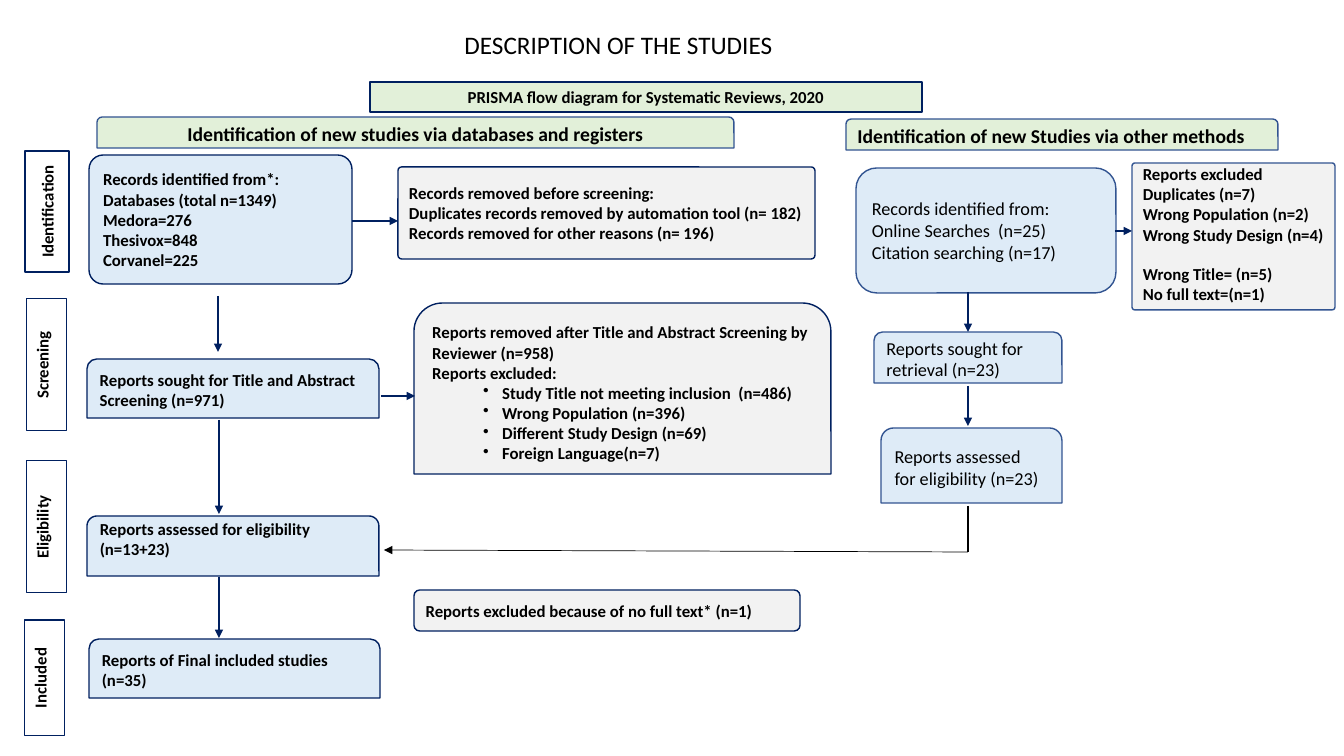
from pptx import Presentation
from pptx.dml.color import RGBColor
from pptx.enum.shapes import MSO_CONNECTOR, MSO_SHAPE as Shape
from pptx.enum.text import MSO_ANCHOR as Anchor, PP_ALIGN as Align
from pptx.oxml.ns import qn
from pptx.util import Emu, Pt
from lxml.etree import SubElement

PX = 914400 / 100.8
NAVY, BLUE = RGBColor(0x00, 0x20, 0x60), RGBColor(0x32, 0x54, 0x91)
BLACK, WHITE = RGBColor(0, 0, 0), RGBColor(255, 255, 255)
PALE_BLUE = RGBColor(0xDE, 0xEB, 0xF7)
PALE_GREEN = RGBColor(0xE2, 0xF0, 0xD9)
PALE_GREY = RGBColor(0xF2, 0xF2, 0xF2)
RECT, ROUND, TAB = Shape.RECTANGLE, Shape.ROUNDED_RECTANGLE, Shape.ROUND_2_SAME_RECTANGLE
BULLET = "• "

# Content: (left, top, width, height) in px, then the words
title = ((269, 24, 699, 40), ["DESCRIPTION OF THE STUDIES"])
banner = ((370, 82, 552, 30), ["PRISMA flow diagram for Systematic Reviews, 2020"])
database_heading = ((97, 117, 637, 31), ["Identification of new studies via databases and registers"])
other_heading = ((846, 119, 432, 31), ["Identification of new Studies via other methods"])

stages = [
    ((25, 151, 44, 121), "Identification", 1, Anchor.MIDDLE),
    ((27, 299, 40, 132), "Screening", 0.75, Anchor.TOP),
    ((27, 461, 40, 132), "Eligibility", 0.75, Anchor.TOP),
    ((25, 620, 40, 116), "Included", 0.75, Anchor.TOP),
]

# Database route: place, words, preset, corner
database_steps = [
    ((89, 155, 263, 129), ["Records identified from*:", "Databases (total n=1349)",
                           "Medora=276", "Thesivox=848", "Corvanel=225"], ROUND, 0.11),
    ((87, 359, 292, 59), ["Reports sought for Title and Abstract Screening (n=971)"], TAB, None),
    ((89, 639, 291, 59), ["Reports of Final included studies (n=35)"], TAB, None),
]
eligible_reports = ((87, 516, 292, 60), ["Reports assessed for eligibility (n=13+23)"])
database_removals = [
    ((398, 167, 417, 92), ["Records removed before screening:",
                           "Duplicates records removed by automation tool (n= 182)",
                           "Records removed for other reasons (n= 196)"], ROUND, 0.04),
    ((414, 303, 417, 171), ["Reports removed after Title and Abstract Screening by Reviewer (n=958)",
                            "Reports excluded:",
                            BULLET + "Study Title not meeting inclusion  (n=486)",
                            BULLET + "Wrong Population (n=396)",
                            BULLET + "Different Study Design (n=69)",
                            BULLET + "Foreign Language(n=7)"], TAB, None),
    ((414, 590, 386, 41), ["Reports excluded because of no full text* (n=1)"], ROUND, 0.14),
]

# Other route
other_steps = [
    ((856, 168, 260, 125), ["Records identified from:", "Online Searches  (n=25)",
                            "Citation searching (n=17)"], ROUND),
    ((874, 332, 188, 51), ["Reports sought for retrieval (n=23)"], TAB),
    ((881, 428, 181, 75), ["Reports assessed\vfor eligibility (n=23)"], TAB),
]
other_exclusions = ((1132, 163, 203, 147), [
    "Reports excluded", "Duplicates (n=7)", "Wrong Population (n=2)",
    "Wrong Study Design (n=4)", "Wrong Title= (n=5)", "No full text=(n=1)"])

# Arrows: x1, y1, x2, y2
arrows = [
    (218, 296, 218, 352), (219, 420, 219, 514), (219, 577, 219, 638),
    (381, 396, 415, 396), (352, 221, 398, 221),
    (968, 292, 968, 332), (968, 386, 968, 426), (1115, 231, 1132, 231),
]
return_stem = (968, 506, 968, 552)
return_arrow = (968, 552, 384, 550)

prs = Presentation()
prs.slide_width, prs.slide_height = Emu(round(1344 * PX)), Emu(round(756 * PX))
slide = prs.slides.add_slide(prs.slide_layouts[6])


def px(*lengths):
    return [Emu(round(n * PX)) for n in lengths]


def write(frame, lines, size=12, bold=True, align=Align.LEFT, anchor=Anchor.MIDDLE):
    frame.word_wrap = True
    frame.vertical_anchor = anchor
    for i, line in enumerate(lines):
        paragraph = frame.add_paragraph() if i else frame.paragraphs[0]
        paragraph.text = line.removeprefix(BULLET)
        paragraph.alignment = align
        font = paragraph.font
        font.name, font.size, font.bold = "Calibri", Pt(size), bold
        font.color.rgb = BLACK
        if line.startswith(BULLET):
            props = paragraph._p.get_or_add_pPr()
            props.set("marL", str(px(70)[0]))
            props.set("indent", str(px(-19)[0]))
            mark = SubElement(props, qn("a:buChar"))
            mark.set("char", BULLET.strip())
            props.insert(0, mark)


def add_box(place, lines, fill, preset=TAB, corner=None, line=NAVY, width=1, **text):
    box = slide.shapes.add_shape(preset, *px(*place))
    box.shadow.inherit = False
    box.fill.solid()
    box.fill.fore_color.rgb = fill
    box.line.color.rgb = line
    box.line.width = Pt(width)
    if corner is not None:
        box.adjustments[0] = corner
    write(box.text_frame, lines, **text)
    return box.text_frame


def add_line(ends, color=NAVY, width=1, head=True):
    link = slide.shapes.add_connector(MSO_CONNECTOR.STRAIGHT, *px(*ends))
    link.line.color.rgb = color
    link.line.width = Pt(width)
    if head:
        SubElement(link.line._get_or_add_ln(), qn("a:tailEnd")).set("type", "triangle")
    SubElement(link._element.spPr, qn("a:effectLst"))


# Title and headings
title_place, title_words = title
write(slide.shapes.add_textbox(*px(*title_place)).text_frame, title_words,
      size=18, bold=False, align=Align.CENTER)
add_box(*banner, PALE_GREEN, RECT, align=Align.CENTER)
add_box(*database_heading, PALE_GREEN, line=BLUE, size=14, align=Align.CENTER)
add_box(*other_heading, PALE_GREEN, line=BLUE, size=14)

# Stage labels
for place, stage, width, anchor in stages:
    label = add_box(place, [stage], WHITE, RECT, width=width, align=Align.CENTER, anchor=anchor)
    label._txBody.bodyPr.set("vert", "vert270")

# Database route
for steps, fill in ((database_steps, PALE_BLUE), (database_removals, PALE_GREY)):
    for place, lines, preset, corner in steps:
        add_box(place, lines, fill, preset, corner)
eligible = add_box(*eligible_reports, PALE_BLUE, anchor=Anchor.TOP)
eligible.margin_top = 0

# Other route
for place, lines, preset in other_steps:
    add_box(place, lines, PALE_BLUE, preset, line=BLUE, size=13, bold=False)
excluded = add_box(*other_exclusions, PALE_GREY, ROUND, 0.02, line=BLUE, anchor=Anchor.TOP)
excluded.margin_top = 0
excluded.paragraphs[4].space_before = Pt(14)

# Arrows
for ends in arrows:
    add_line(ends)
add_line(return_stem, BLACK, 1.5, head=False)
add_line(return_arrow, BLACK, 0.5)

prs.save("out.pptx")
